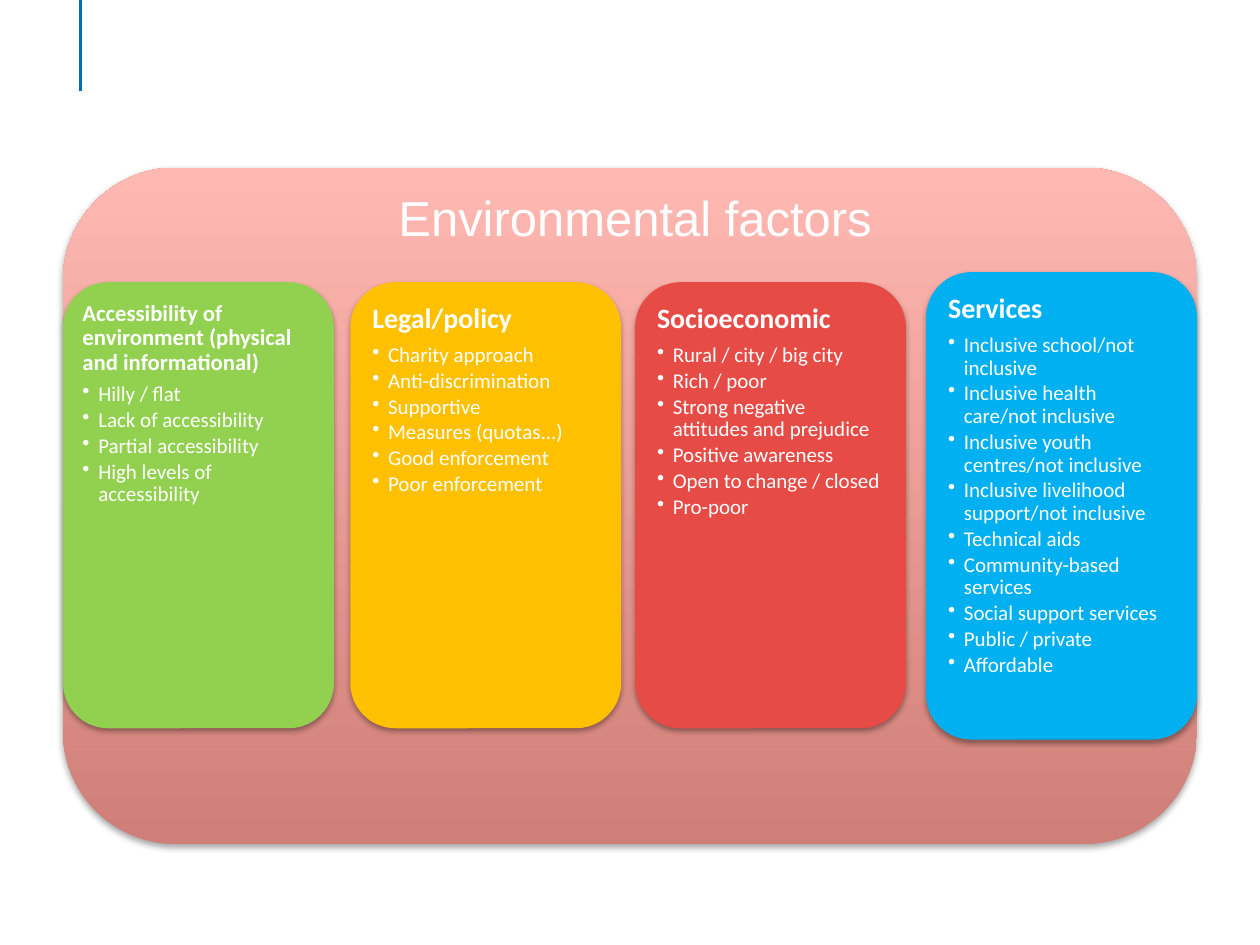
from lxml import etree
from pptx import Presentation, util as u
from pptx.dml.color import RGBColor
from pptx.enum import shapes, text
from pptx.oxml import parse_xml
from pptx.oxml.ns import qn

COLORS = {"white": "FFFFFF", "line": "006FB7", "low": "CF7F77", "high": "FFB8B2",
          "green": "92D050", "amber": "FFC000", "red": "E64B46", "blue": "00B0F0"}
SHADOW = (
    '<a:effectLst xmlns:a="http://schemas.openxmlformats.org/drawingml/2006/main">'
    '<a:outerShdw blurRad="40000" dist="23000" dir="5400000" rotWithShape="0">'
    '<a:srgbClr val="000000"><a:alpha val="35000"/></a:srgbClr>'
    '</a:outerShdw></a:effectLst>')
CARD_W, CARD_PAD = 2.15, 0.105

CARDS = [
    (0.5, 2.24, 3.54, "green", 13, 0.05,
     "Accessibility of environment (physical and informational)",
     ["Hilly / flat", "Lack of accessibility", "Partial accessibility",
      "High levels of accessibility"]),
    (2.78, 2.24, 3.54, "amber", 16, 0.07, "Legal/policy",
     ["Charity approach", "Anti-discrimination", "Supportive",
      "Measures (quotas...)", "Good enforcement", "Poor enforcement"]),
    (5.04, 2.24, 3.54, "red", 16, 0.07, "Socioeconomic",
     ["Rural / city / big city", "Rich / poor",
      "Strong negative attitudes and prejudice", "Positive awareness",
      "Open to change / closed", "Pro-poor"]),
    (7.35, 2.16, 3.71, "blue", 16, 0.07, "Services",
     ["Inclusive school/not inclusive", "Inclusive health care/not inclusive",
      "Inclusive youth centres/not inclusive",
      "Inclusive livelihood support/not inclusive", "Technical aids",
      "Community-based services", "Social support services",
      "Public / private", "Affordable"]),
]


def rgb(name):
    return RGBColor.from_string(COLORS[name])


def apply(obj, values):
    for name, value in values.items():
        setattr(obj, name, value)


class Deck:
    font = "Calibri"
    title_font = "Arial"

    def __init__(self, width, height):
        self.prs = Presentation()
        apply(self.prs, {"slide_width": u.Inches(width), "slide_height": u.Inches(height)})
        self.s = self.prs.slides.add_slide(self.prs.slide_layouts[5])

    def style(self, font, size, **extra):
        apply(font, {"name": self.font, "size": u.Pt(size), "bold": False, **extra})
        font.color.rgb = rgb("white")

    def line(self, x1, y1, x2, y2, color, width):
        sp = self.s.shapes.add_connector(
            shapes.MSO_CONNECTOR.STRAIGHT, *map(u.Inches, (x1, y1, x2, y2)))
        sp.line.color.rgb = rgb(color)
        sp.line.width = u.Pt(width)
        etree.SubElement(sp._element.spPr, qn("a:effectLst"))

    def panel(self, kind, box, *colors):
        sp = self.s.shapes.add_shape(kind, *map(u.Inches, box))
        if len(colors) == 1:
            sp.fill.solid()
            sp.fill.fore_color.rgb = rgb(colors[0])
        else:
            sp.fill.gradient()
            sp.fill.gradient_angle = 90
            for stop, color in zip(sp.fill.gradient_stops, colors):
                stop.color.rgb = rgb(color)
        sp.line.fill.background()
        sp._element.spPr.append(parse_xml(SHADOW))

    def title(self, words, box, size):
        sp = self.s.shapes.title
        apply(sp, dict(zip(("left", "top", "width", "height"), map(u.Inches, box))))
        tf = sp.text_frame
        tf.text = words
        apply(tf, {"word_wrap": True, "auto_size": text.MSO_AUTO_SIZE.NONE,
                   "vertical_anchor": text.MSO_ANCHOR.TOP})
        p = tf.paragraphs[0]
        p.alignment = text.PP_ALIGN.CENTER
        self.style(p.runs[0].font, size, name=self.title_font)
        self.s.shapes._spTree.append(sp._element)

    def paragraph(self, p, words, size, after, bullet=False):
        p.line_spacing = 0.9
        pPr = p._p.get_or_add_pPr()
        gap = etree.SubElement(pPr, qn("a:spcAft"))
        etree.SubElement(gap, qn("a:spcPct"), val=str(after * 1000))
        if bullet:
            p.level = 1
            indent = u.Inches(0.125)
            pPr.set("marL", str(indent))
            pPr.set("indent", str(-indent))
            etree.SubElement(pPr, qn("a:buChar"), char="•")
        r = p.add_run()
        r.text = words
        self.style(r.font, size, bold=not bullet)

    def card(self, x, y, h, color, size, inset, heading, items):
        self.panel(shapes.MSO_SHAPE.ROUNDED_RECTANGLE, (x, y, CARD_W, h), color)
        box = (x + CARD_PAD, y + CARD_PAD, CARD_W - 2 * CARD_PAD, h - 2 * CARD_PAD)
        tf = self.s.shapes.add_textbox(*map(u.Inches, box)).text_frame
        sides = ("left", "top", "right", "bottom")
        apply(tf, {"word_wrap": True,
                   **{f"margin_{side}": u.Inches(inset) for side in sides}})
        self.paragraph(tf.paragraphs[0], heading, size, 35)
        for item in items:
            self.paragraph(tf.add_paragraph(), item, 12, 15, bullet=True)


def main():
    deck = Deck(10, 7.5)
    deck.line(0.64, 0, 0.64, 0.72, "line", 2)
    deck.panel(shapes.MSO_SHAPE.FLOWCHART_ALTERNATE_PROCESS,
               (0.5, 1.33, 9, 5.37), "low", "high")
    for card in CARDS:
        deck.card(*card)
    deck.title("Environmental factors", (2.97, 1.44, 4.14, 0.57), 28)
    deck.prs.save("out.pptx")


if __name__ == "__main__":
    main()
